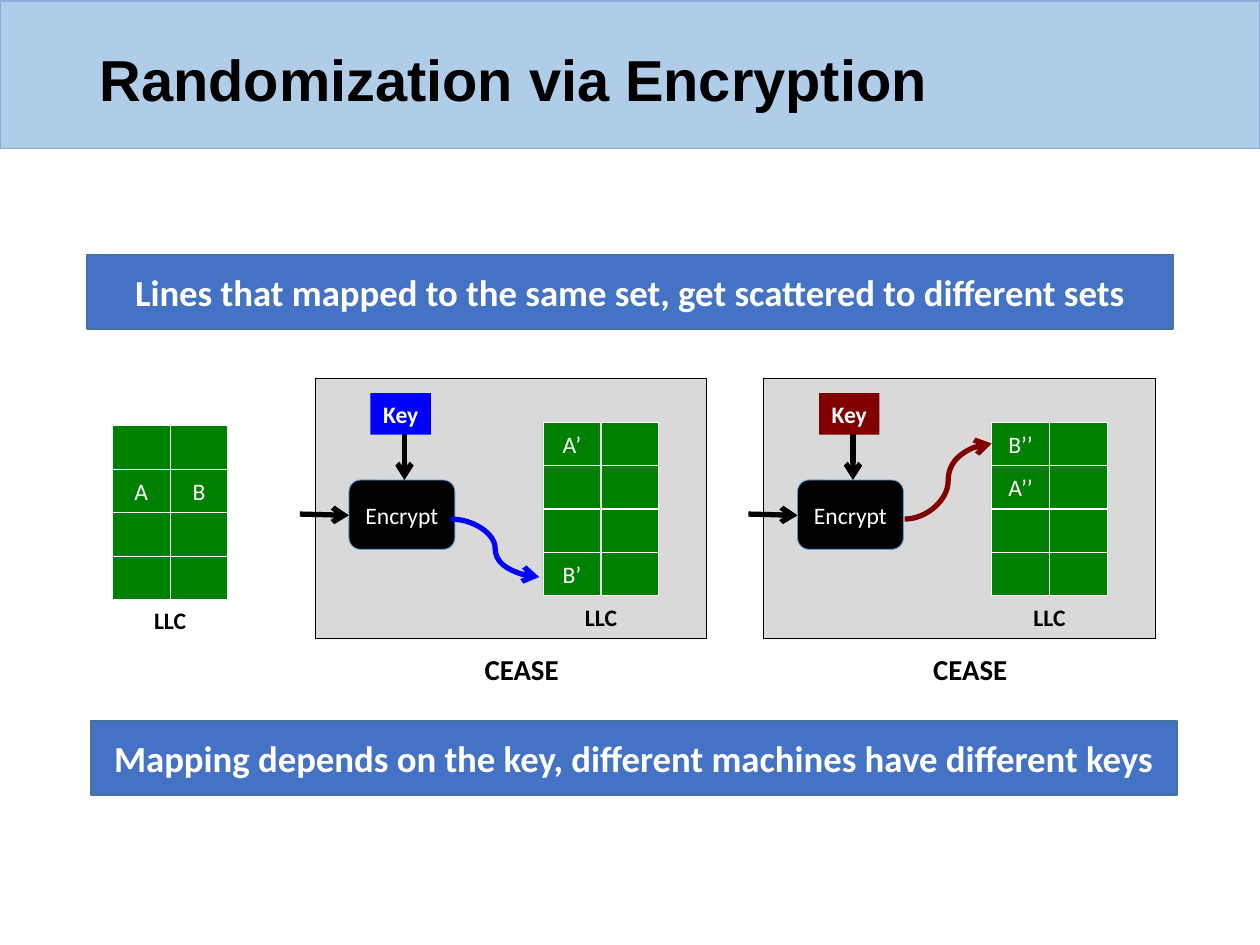
from dataclasses import dataclass
from typing import NamedTuple

from lxml.etree import SubElement
from pptx import Presentation
from pptx.dml.color import RGBColor
from pptx.enum.shapes import MSO_CONNECTOR as Link, MSO_SHAPE as Preset
from pptx.enum.text import MSO_ANCHOR as Anchor, PP_ALIGN as Align
from pptx.oxml.ns import qn
from pptx.util import Inches, Pt

COLORS = {
    "band": "AFCCE9", "band_line": "8FAADC",
    "banner": "4472C4", "banner_line": "43739E",
    "panel": "D9D9D9", "cell": "008000", "encrypt_line": "5B9BD5",
    "blue_key": "0000FF", "red_key": "800000",
    "black": "000000", "white": "FFFFFF",
}

# The slide is a grid of 100 columns by 75 rows
COLUMNS, ROWS = 100, 75
WIDTH, HEIGHT = Inches(10), Inches(7.5)
CELL_COLS, CELL_ROWS = 4.6, 3.45


class Box(NamedTuple):
    col: float
    row: float
    cols: float
    rows: float


@dataclass(frozen=True)
class Style:
    size: float = 13.5
    color: str = "white"
    bold: bool = False
    font: str = "Calibri"
    align: Align = Align.CENTER
    wrap: bool = True


@dataclass(frozen=True)
class Machine:
    left: float
    key_color: str
    lines: dict[tuple[int, int], str]  # (column, row) of the cache -> line
    route: tuple[float, float, float, float]  # columns from the panel's left


CELL_TEXT = Style()
KEY_TEXT = Style(bold=True, wrap=False)
CACHE_TEXT = Style(color="black", bold=True, wrap=False)
MACHINE_TEXT = Style(16.5, "black", True, wrap=False)
BANNER_TEXT = Style(21, bold=True)
TITLE_TEXT = Style(33, "black", True, "Arial", Align.LEFT)

BANNERS = [
    (Box(6.9, 20.2, 86.2, 5.9),
     "Lines that mapped to the same set, get scattered to different sets"),
    (Box(7.2, 57.2, 86.2, 5.9),
     "Mapping depends on the key, different machines have different keys"),
]
MACHINES = [
    Machine(25, "blue_key", {(0, 0): "A’", (0, 3): "B’"},
            (10.8, 41.2, 17.8, 45.8)),
    Machine(60.6, "red_key", {(0, 0): "B’’", (0, 1): "A’’"},
            (11.2, 41.2, 18.1, 35.2)),
]


def rgb(name: str) -> RGBColor:
    return RGBColor.from_string(COLORS[name])


def across(cols: float) -> int:
    return round(WIDTH * cols / COLUMNS)


def down(rows: float) -> int:
    return round(HEIGHT * rows / ROWS)


def place(box: Box) -> tuple[int, int, int, int]:
    return across(box.col), down(box.row), across(box.cols), down(box.rows)


def write(shape, text: str, style: Style) -> None:
    frame = shape.text_frame
    layout = {"word_wrap": style.wrap, "vertical_anchor": Anchor.MIDDLE,
              "margin_left": 0, "margin_right": 0,
              "margin_top": 0, "margin_bottom": 0}
    for name, value in layout.items():
        setattr(frame, name, value)
    paragraph = frame.paragraphs[0]
    paragraph.alignment = style.align
    run = paragraph.add_run()
    run.text = text
    letters = {"size": Pt(style.size), "bold": style.bold, "name": style.font}
    for name, value in letters.items():
        setattr(run.font, name, value)
    run.font.color.rgb = rgb(style.color)


def add_block(shapes, box: Box, fill: str, line: str | None = None,
              weight: float = 0.5, text: str = "", style: Style = CELL_TEXT,
              preset: Preset = Preset.RECTANGLE) -> None:
    block = shapes.add_shape(preset, *place(box))
    block.shadow.inherit = False
    block.fill.solid()
    block.fill.fore_color.rgb = rgb(fill)
    if line:
        block.line.color.rgb = rgb(line)
        block.line.width = Pt(weight)
    else:
        block.line.fill.background()
    if text:
        write(block, text, style)


def add_label(shapes, box: Box, text: str, style: Style) -> None:
    write(shapes.add_textbox(*place(box)), text, style)


def add_arrow(shapes, start: tuple[float, float], end: tuple[float, float],
              color: str = "black", kind: Link = Link.STRAIGHT) -> None:
    arrow = shapes.add_connector(kind, across(start[0]), down(start[1]),
                                 across(end[0]), down(end[1]))
    arrow.line.color.rgb = rgb(color)
    arrow.line.width = Pt(3)
    SubElement(arrow.line._get_or_add_ln(), qn("a:tailEnd"), type="arrow")
    SubElement(arrow._element.spPr, qn("a:effectLst"))


def add_cache(shapes, left: float, top: float,
              lines: dict[tuple[int, int], str]) -> None:
    for row in range(4):
        for col in range(2):
            cell = Box(left + col * CELL_COLS, top + row * CELL_ROWS,
                       CELL_COLS, CELL_ROWS)
            add_block(shapes, cell, "cell", "white",
                      text=lines.get((col, row), ""))
    caption = Box(left + CELL_COLS / 2, top + 4 * CELL_ROWS, CELL_COLS, 3.3)
    add_label(shapes, caption, "LLC", CACHE_TEXT)


def add_machine(shapes, machine: Machine) -> None:
    left = machine.left
    add_block(shapes, Box(left, 30, 31.1, 20.7), "panel", "black")
    add_cache(shapes, left + 18.1, 33.5, machine.lines)

    # Address and key enter the cipher, the new set comes out
    add_arrow(shapes, (left - 1.2, 40.8), (left + 2.7, 40.9))
    add_block(shapes, Box(left + 2.7, 38.1, 8.4, 5.5), "black",
              "encrypt_line", text="Encrypt", preset=Preset.ROUNDED_RECTANGLE)
    add_arrow(shapes, (left + 7.1, 34.1), (left + 7.1, 38.1))
    from_col, from_row, to_col, to_row = machine.route
    add_arrow(shapes, (left + from_col, from_row), (left + to_col, to_row),
              machine.key_color, Link.CURVE)
    add_block(shapes, Box(left + 4.4, 31.2, 4.8, 3.3), machine.key_color,
              text="Key", style=KEY_TEXT)
    add_label(shapes, Box(left + 12.4, 51.2, 8, 3.8), "CEASE", MACHINE_TEXT)


def main() -> None:
    deck = Presentation()
    deck.slide_width, deck.slide_height = WIDTH, HEIGHT
    shapes = deck.slides.add_slide(deck.slide_layouts[6]).shapes

    # Title band
    add_block(shapes, Box(0, 0.1, COLUMNS, 11.7), "band", "band_line", 1)
    add_label(shapes, Box(7.9, 2.3, 84.2, 7.8),
              "Randomization via Encryption", TITLE_TEXT)

    # Statements above and below the diagram
    for box, statement in BANNERS:
        add_block(shapes, box, "banner", "banner_line", 1,
                  statement, BANNER_TEXT)

    # Plain cache, then the two machines with their own keys
    add_cache(shapes.add_group_shape().shapes, 8.9, 33.8,
              {(0, 1): "A", (1, 1): "B"})
    for machine in MACHINES:
        add_machine(shapes.add_group_shape().shapes, machine)

    deck.save("out.pptx")


if __name__ == "__main__":
    main()
